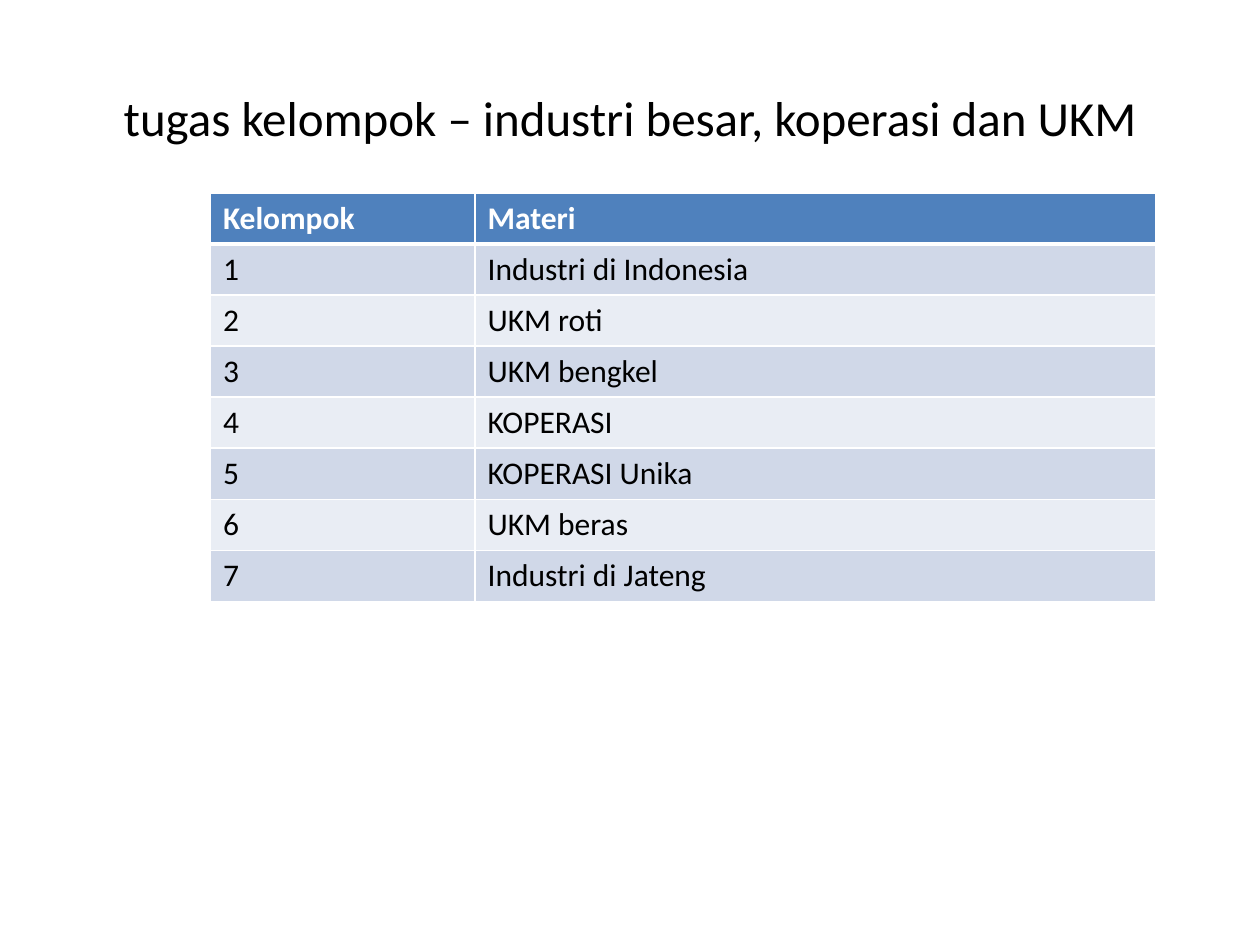
from lxml import etree
from pptx import Presentation
from pptx import util as u
from pptx.dml.color import RGBColor
from pptx.enum import text
from pptx.oxml import ns

BLACK = RGBColor(0x00, 0x00, 0x00)
WHITE = RGBColor(0xFF, 0xFF, 0xFF)
HEADER_BLUE = RGBColor(0x4F, 0x81, 0xBD)
BANDS = (RGBColor(0xD0, 0xD8, 0xE8), RGBColor(0xE9, 0xED, 0xF4))

HEADINGS = ("Kelompok", "Materi")
TOPICS = (
    "Industri di Indonesia",
    "UKM roti",
    "UKM bengkel",
    "KOPERASI",
    "KOPERASI Unika",
    "UKM beras",
    "Industri di Jateng",
)


def write(frame, content, size=18, color=BLACK, bold=False, align=text.PP_ALIGN.LEFT):
    paragraph = frame.paragraphs[0]
    paragraph.alignment = align
    run = paragraph.add_run()
    run.text = content
    run.font.name = "Calibri"
    run.font.size = u.Pt(size)
    run.font.bold = bold
    run.font.color.rgb = color


def add_border(cell, side, width):
    properties = cell._tc.get_or_add_tcPr()
    line = etree.SubElement(properties, ns.qn(f"a:ln{side}"), w=str(u.Pt(width)))
    fill = etree.SubElement(line, ns.qn("a:solidFill"))
    etree.SubElement(fill, ns.qn("a:srgbClr"), val=str(WHITE))


class SlideBuilder:
    """Holds the current slide and the style of its elements."""

    def __init__(self, slide):
        self.slide = slide

    def title(self, content, left, top, width, height):
        title = self.slide.shapes.title
        title.left, title.top = u.Inches(left), u.Inches(top)
        title.width, title.height = u.Inches(width), u.Inches(height)
        title.text_frame.vertical_anchor = text.MSO_ANCHOR.MIDDLE
        write(title.text_frame, content, size=28, align=text.PP_ALIGN.CENTER)

    def table(self, rows, left, top, column_widths, row_height):
        table = self.slide.shapes.add_table(
            len(rows), len(column_widths), u.Inches(left), u.Inches(top),
            u.Inches(sum(column_widths)), u.Inches(row_height * len(rows)),
        ).table
        for column, width in zip(table.columns, column_widths):
            column.width = u.Inches(width)
        for row_number, values in enumerate(rows):
            table.rows[row_number].height = u.Inches(row_height)
            for column_number, value in enumerate(values):
                self.cell(table.cell(row_number, column_number), value, row_number)

    def cell(self, cell, value, row_number):
        is_header = row_number == 0
        # The rule under the header is thicker than the other borders
        top_width = 3 if row_number == 1 else 1
        bottom_width = 3 if is_header else 1
        for side, width in zip("LRTB", (1, 1, top_width, bottom_width)):
            add_border(cell, side, width)
        cell.fill.solid()
        cell.fill.fore_color.rgb = HEADER_BLUE if is_header else BANDS[(row_number - 1) % 2]
        write(cell.text_frame, value, color=WHITE if is_header else BLACK, bold=is_header)


def main():
    presentation = Presentation()
    presentation.slide_width, presentation.slide_height = u.Inches(10), u.Inches(7.5)
    builder = SlideBuilder(presentation.slides.add_slide(presentation.slide_layouts[5]))

    # Title
    builder.title("tugas kelompok – industri besar, koperasi dan UKM", 0.5, 0.3, 9, 1.25)

    # Group assignments
    groups = [(str(number), topic) for number, topic in enumerate(TOPICS, start=1)]
    builder.table([HEADINGS, *groups], 1.67, 1.53, (2.1, 5.4), 0.405)

    presentation.save("out.pptx")


if __name__ == "__main__":
    main()
